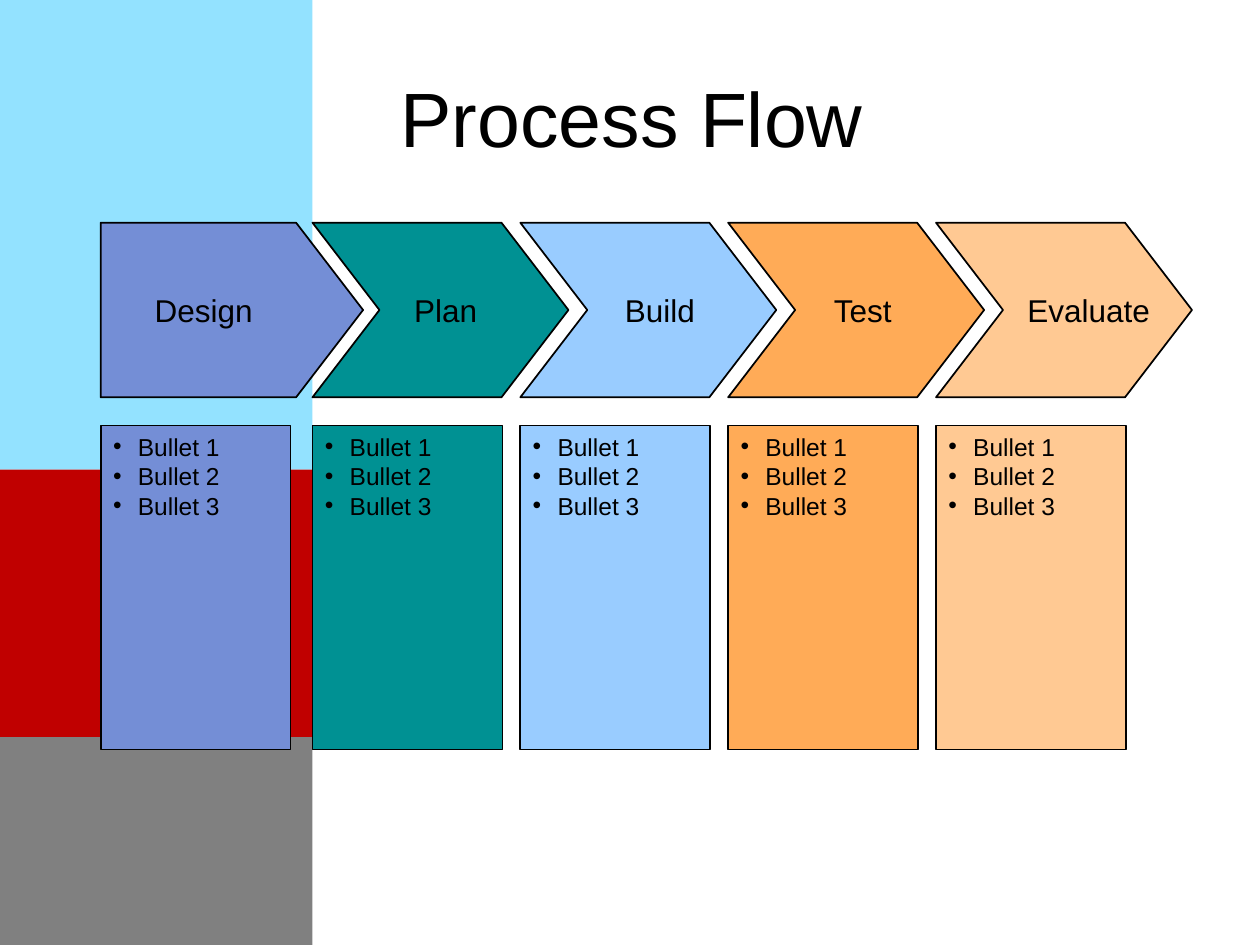
from itertools import pairwise

from lxml import etree
from pptx import Presentation
from pptx.dml.color import RGBColor
from pptx.enum.shapes import MSO_SHAPE
from pptx.enum.text import MSO_ANCHOR, MSO_AUTO_SIZE, PP_ALIGN
from pptx.oxml.ns import qn
from pptx.util import Cm, Pt

RECT = MSO_SHAPE.RECTANGLE
TOP, MIDDLE = MSO_ANCHOR.TOP, MSO_ANCHOR.MIDDLE
LEFT, CENTER = PP_ALIGN.LEFT, PP_ALIGN.CENTER
GROW = MSO_AUTO_SIZE.SHAPE_TO_FIT_TEXT


class Theme:
    font = "Arial"
    ink = "000000"
    bands = ["93E2FF", "C00000", "808080"]
    steps = ["748ED6", "009193", "99CCFF", "FFAB57", "FFC993"]
    title, label, body = 44, 18, 14
    line = 1


def paint(shape, fill, line=None):
    shape.shadow.inherit = False
    shape.fill.solid()
    shape.fill.fore_color.rgb = RGBColor.from_string(fill)
    if line:
        shape.line.color.rgb = RGBColor.from_string(line)
        shape.line.width = Pt(Theme.line)
    else:
        shape.line.fill.background()


def write(para, text, size, align=LEFT):
    para.alignment = align
    run = para.add_run()
    run.text = text
    run.font.name = Theme.font
    run.font.size = Pt(size)
    run.font.color.rgb = RGBColor.from_string(Theme.ink)


prs = Presentation()
prs.slide_width, prs.slide_height = Cm(25.4), Cm(19.05)
slide = prs.slides.add_slide(prs.slide_layouts[6])
shapes = slide.shapes

# Side bands
edges = [0, 9.47, 14.86, 19.05]
for (top, end), fill in zip(pairwise(edges), Theme.bands):
    band = shapes.add_shape(RECT, 0, Cm(top), Cm(6.3), Cm(end - top))
    paint(band, fill)

# Title
title = shapes.add_textbox(Cm(1.35), Cm(0.76), Cm(22.78), Cm(3.18))
frame = title.text_frame
frame.word_wrap = True
frame.vertical_anchor = MIDDLE
write(frame.paragraphs[0], "Process Flow", Theme.title, CENTER)

# Step names with the left edge and width of each label
steps = [
    ("Design", 2.87, 2.55),
    ("Plan", 8.1, 1.85),
    ("Build", 12.35, 2),
    ("Test", 16.56, 1.8),
    ("Evaluate", 20.46, 3.1),
]
lefts = [2.03] + [6.3 + 4.19 * i for i in range(4)]

# Bullet boxes
for left, fill in zip(lefts, Theme.steps):
    box = shapes.add_shape(RECT, Cm(left), Cm(8.58), Cm(3.83), Cm(6.53))
    paint(box, fill, Theme.ink)
    frame = box.text_frame
    frame.word_wrap = True
    frame.vertical_anchor = TOP
    for n in range(1, 4):
        para = frame.paragraphs[0] if n == 1 else frame.add_paragraph()
        write(para, f"Bullet {n}", Theme.body)
        props = para._p.get_or_add_pPr()
        props.set("marL", str(Cm(0.5)))
        props.set("indent", str(-Cm(0.5)))
        etree.SubElement(props, qn("a:buFont"), typeface=Theme.font)
        etree.SubElement(props, qn("a:buChar"), char="•")

# Arrows: the first has a flat back, the rest a notch
high, mid, low, tip = 4.49, 6.25, 8.01, 1.35
for i, (left, fill) in enumerate(zip(lefts, Theme.steps)):
    neck = left + (3.81 if i else 3.94)
    points = [(neck, high), (neck + tip, mid), (neck, low), (left, low)]
    if i:
        points.append((left + tip, mid))
    path = shapes.build_freeform(Cm(left), Cm(high))
    path.add_line_segments([(Cm(x), Cm(y)) for x, y in points], close=True)
    paint(path.convert_to_shape(), fill, Theme.ink)

# Arrow labels
for name, left, width in steps:
    label = shapes.add_textbox(Cm(left), Cm(5.74), Cm(width), Cm(1.02))
    frame = label.text_frame
    frame.word_wrap = False
    frame.auto_size = GROW
    write(frame.paragraphs[0], name, Theme.label)

prs.save("out.pptx")
